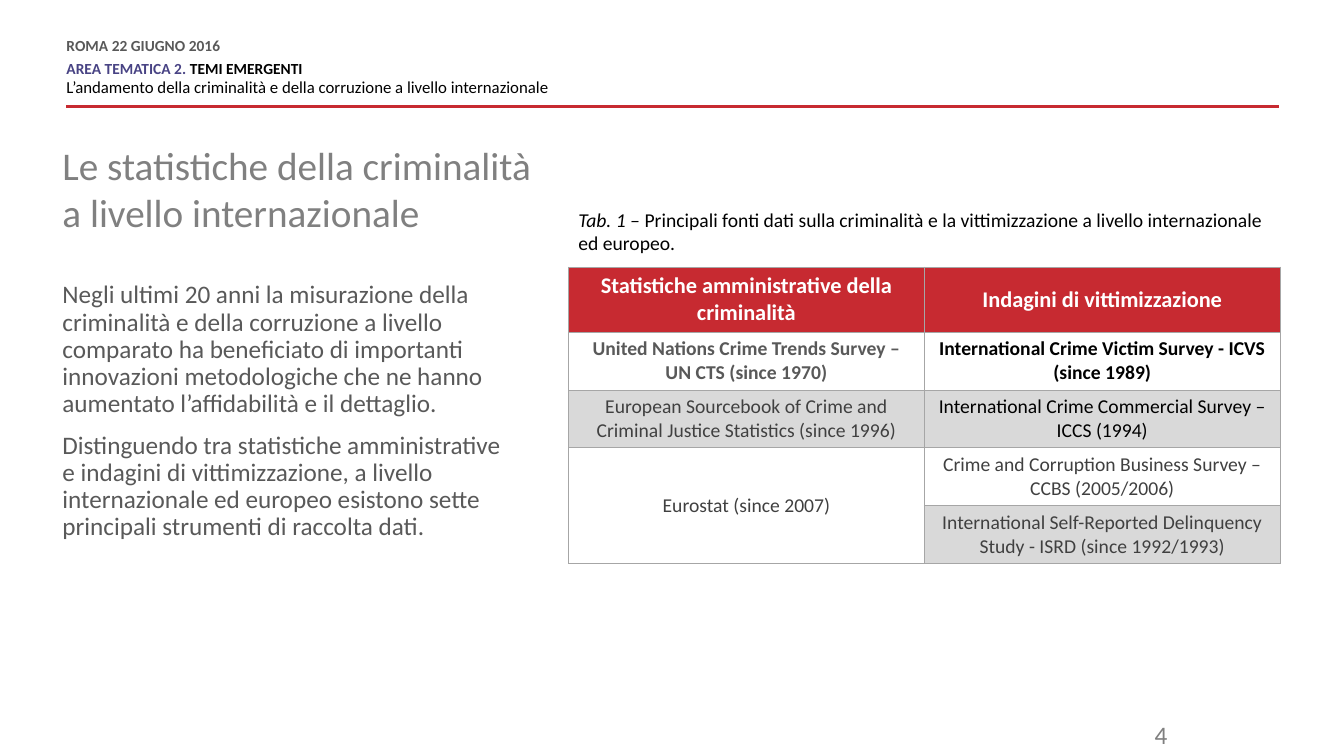
"""Builds the slide on international crime statistics with its table of data sources."""
from lxml import etree
from pptx import Presentation
from pptx.dml.color import RGBColor
from pptx.enum import shapes, text
from pptx.oxml import ns
from pptx.util import Pt

RED, GREY, DARK, BLACK, BAND = "C72A31", "595959", "404040", "000000", "D9D9D9"


def add_run(paragraph, words, size, color, bold=False, italic=False):
    run = paragraph.add_run()
    run.text = words
    run.font.name = "Calibri"
    run.font.size = Pt(size)
    run.font.bold = bold
    run.font.italic = italic
    run.font.color.rgb = RGBColor.from_string(color)
    return run


def add_box(left, top, width, height, inset=True):
    frame = slide.shapes.add_textbox(Pt(left), Pt(top), Pt(width), Pt(height)).text_frame
    frame.word_wrap = True
    if not inset:
        frame.margin_left = frame.margin_right = frame.margin_top = frame.margin_bottom = 0
    return frame


presentation = Presentation()
presentation.slide_width, presentation.slide_height = Pt(960), Pt(540)
slide = presentation.slides.add_slide(presentation.slide_layouts[5])

rule = slide.shapes.add_connector(
    shapes.MSO_CONNECTOR.STRAIGHT, Pt(47.5), Pt(76.3), Pt(913.7), Pt(76.3))
rule.line.color.rgb = RGBColor.from_string(RED)
rule.line.width = Pt(2)
etree.SubElement(rule._element.spPr, ns.qn("a:effectLst"))

header = add_box(47.5, 28.1, 600.5, 42.5, inset=False)
header_lines = [
    ([("ROMA 22 GIUGNO 2016", 11, GREY, True)], 0, 6),
    ([("AREA TEMATICA 2. ", 11, "484384", True), ("TEMI EMERGENTI", 11, BLACK, True)], 0, 0),
    ([("L’andamento della criminalità e della corruzione a livello internazionale",
       12, BLACK, False)], 3, 6),
]
for index, (runs, before, after) in enumerate(header_lines):
    paragraph = header.add_paragraph() if index else header.paragraphs[0]
    paragraph.line_spacing = Pt(10.8)
    paragraph.space_before, paragraph.space_after = Pt(before), Pt(after)
    for run in runs:
        add_run(paragraph, *run)

title = slide.shapes.title
title.left, title.top, title.width, title.height = Pt(44.6), Pt(101), Pt(340), Pt(69)
frame = title.text_frame
frame.margin_left = frame.margin_right = frame.margin_top = frame.margin_bottom = 0
frame.vertical_anchor = text.MSO_ANCHOR.TOP
frame.auto_size = text.MSO_AUTO_SIZE.NONE
paragraph = frame.paragraphs[0]
paragraph.alignment = text.PP_ALIGN.LEFT
add_run(paragraph, "Le statistiche della criminalità", 28, "808080")
paragraph.add_line_break()
add_run(paragraph, "a livello internazionale", 28, "808080")

body = add_box(44.6, 201.6, 320.4, 240.5, inset=False)
body_texts = [
    "Negli ultimi 20 anni la misurazione della criminalità e della corruzione a livello "
    "comparato ha beneficiato di importanti innovazioni metodologiche che ne hanno "
    "aumentato l’affidabilità e il dettaglio.",
    "Distinguendo tra statistiche amministrative e indagini di vittimizzazione, a livello "
    "internazionale ed europeo esistono sette principali strumenti di raccolta dati.",
]
for index, words in enumerate(body_texts):
    paragraph = body.add_paragraph() if index else body.paragraphs[0]
    paragraph.line_spacing = 0.9
    paragraph.space_before = Pt(10 if index else 0)
    add_run(paragraph, words, 18, GREY)

caption = add_box(406.1, 144.7, 508.3, 41).paragraphs[0]
add_run(caption, "Tab. 1 – ", 14, BLACK, italic=True)
add_run(caption, "Principali fonti dati sulla criminalità e la vittimizzazione a livello "
        "internazionale ed europeo.", 14, BLACK)

rows = [
    [("Statistiche amministrative della criminalità", 16, "FFFFFF", True, RED),
     ("Indagini di vittimizzazione", 16, "FFFFFF", True, RED)],
    [("United Nations Crime Trends Survey – UN CTS (since 1970)", 14, GREY, True, None),
     ("International Crime Victim Survey - ICVS (since 1989)", 14, BLACK, True, None)],
    [("European Sourcebook of Crime and Criminal Justice Statistics (since 1996)",
      14, DARK, False, BAND),
     ("International Crime Commercial Survey – ICCS (1994)", 14, BLACK, False, BAND)],
    [("Eurostat (since 2007)", 14, DARK, False, None),
     ("Crime and Corruption Business Survey – CCBS (2005/2006)", 14, DARK, False, None)],
    [None,
     ("International Self-Reported Delinquency Study - ISRD (since 1992/1993)",
      14, DARK, False, BAND)],
]
table = slide.shapes.add_table(5, 2, Pt(406.1), Pt(190.8), Pt(508.4), Pt(212)).table
table.horz_banding = False
for row_index, row in enumerate(rows):
    table.rows[row_index].height = Pt(41.4 if row_index else 46.4)
    for column_index, content in enumerate(row):
        cell = table.cell(row_index, column_index)
        properties = cell._tc.get_or_add_tcPr()
        for side in ("lnL", "lnR", "lnT", "lnB"):
            border = etree.SubElement(properties, ns.qn(f"a:{side}"), w=str(Pt(0.75)))
            fill = etree.SubElement(border, ns.qn("a:solidFill"))
            etree.SubElement(fill, ns.qn("a:srgbClr"), val="A6A6A6")
        if content is None:
            cell.fill.background()
            continue
        words, size, color, bold, background = content
        if background:
            cell.fill.solid()
            cell.fill.fore_color.rgb = RGBColor.from_string(background)
        else:
            cell.fill.background()
        cell.vertical_anchor = text.MSO_ANCHOR.MIDDLE
        paragraph = cell.text_frame.paragraphs[0]
        paragraph.alignment = text.PP_ALIGN.CENTER
        add_run(paragraph, words, size, color, bold)
table.cell(3, 0).merge(table.cell(4, 0))

number = add_box(756, 510.5, 85, 25.2).paragraphs[0]
number.alignment = text.PP_ALIGN.RIGHT
add_run(number, "4", 18, "7F7F7F")

presentation.save("out.pptx")
